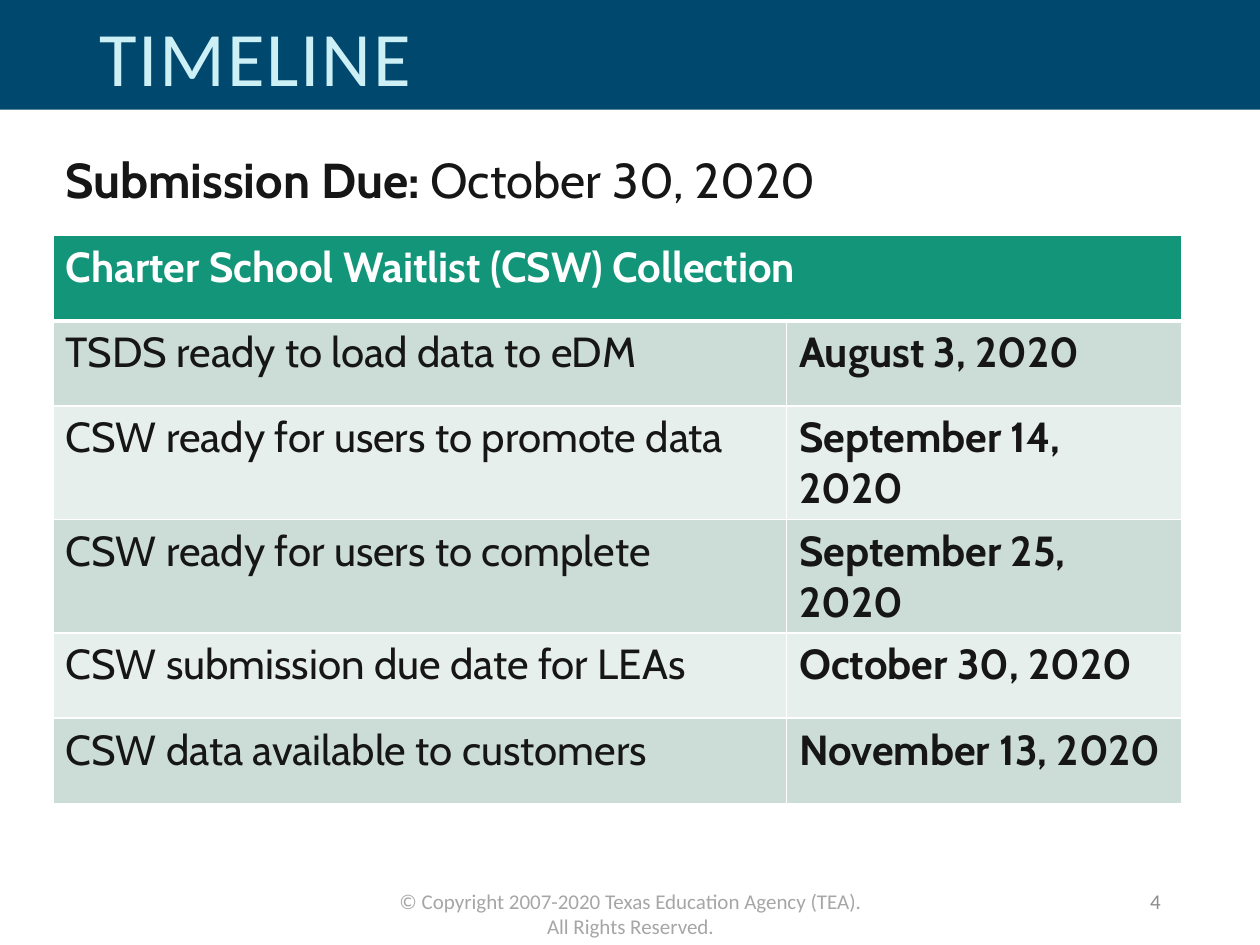
from lxml.etree import SubElement
from pptx import Presentation
from pptx.dml.color import RGBColor
from pptx.enum.shapes import MSO_SHAPE
from pptx.enum.text import MSO_ANCHOR, PP_ALIGN
from pptx.oxml.ns import qn
from pptx.util import Inches, Pt

NAVY, ICE, INK, WHITE = "00486E", "CCF0F5", "171616", "FFFFFF"
GREEN, BANDS = "129579", ("CCDDD7", "E7EFEC")
FOOTER_GREY, NUMBER_GREY = "A6A6A6", "8C8C8C"
MILESTONES = [
    ("TSDS ready to load data to eDM", "August 3, 2020"),
    ("CSW ready for users to promote data", "September 14, 2020"),
    ("CSW ready for users to complete", "September 25, 2020"),
    ("CSW submission due date for LEAs", "October 30, 2020"),
    ("CSW data available to customers", "November 13, 2020"),
]


def color(value):
    return RGBColor.from_string(value)


class TimelineSlide:
    """Holds the slide and its style; boxes are shares of the slide's size."""

    heading_font, body_font = "Calibri", "Cabin"

    def __init__(self, presentation):
        self.width, self.height = presentation.slide_width, presentation.slide_height
        self.slide = presentation.slides.add_slide(presentation.slide_layouts[5])

    def box(self, left, top, width, height):
        return (round(left * self.width), round(top * self.height),
                round(width * self.width), round(height * self.height))

    def format_run(self, run, font, size, ink, bold=False):
        run.font.name, run.font.size, run.font.bold = font, Pt(size), bold
        run.font.color.rgb = color(ink)

    def band(self, share, fill):
        shape = self.slide.shapes.add_shape(MSO_SHAPE.RECTANGLE, *self.box(0, 0, 1, share))
        shape.shadow.inherit = False
        shape.fill.solid()
        shape.fill.fore_color.rgb = color(fill)
        shape.line.fill.background()
        tree = self.slide.shapes._spTree
        tree.remove(shape._element)
        tree.insert(2, shape._element)

    def title(self, text, box):
        title = self.slide.shapes.title
        title.left, title.top, title.width, title.height = self.box(*box)
        frame = title.text_frame
        frame.text = text
        frame.vertical_anchor = MSO_ANCHOR.MIDDLE
        paragraph = frame.paragraphs[0]
        paragraph.alignment, paragraph.line_spacing = PP_ALIGN.LEFT, 0.9
        run = paragraph.runs[0]
        self.format_run(run, self.heading_font, 44, ICE)
        run.font._element.set("spc", "100")

    def text(self, runs, box, font, size, ink, align=PP_ALIGN.LEFT,
             anchor=MSO_ANCHOR.TOP, spacing=1.0):
        frame = self.slide.shapes.add_textbox(*self.box(*box)).text_frame
        frame.word_wrap, frame.vertical_anchor = True, anchor
        paragraph = frame.paragraphs[0]
        paragraph.alignment, paragraph.line_spacing = align, spacing
        for words, bold in runs:
            run = paragraph.add_run()
            run.text = words
            self.format_run(run, font, size, ink, bold)

    def cell(self, cell, text, fill, ink, bold, bottom=1):
        cell.text = text
        for run in cell.text_frame.paragraphs[0].runs:
            self.format_run(run, self.body_font, 24, ink, bold)
        properties = cell._tc.get_or_add_tcPr()
        for side, points in (("L", 1), ("R", 1), ("T", 1), ("B", bottom)):
            line = SubElement(properties, qn(f"a:ln{side}"), w=str(Pt(points)))
            solid = SubElement(line, qn("a:solidFill"))
            SubElement(solid, qn("a:srgbClr"), val=WHITE)
        cell.fill.solid()
        cell.fill.fore_color.rgb = color(fill)

    def table(self, heading, rows, box, first_share):
        left, top, width, height = self.box(*box)
        table = self.slide.shapes.add_table(len(rows) + 1, 2, left, top, width, height).table
        table.columns[0].width = round(width * first_share)
        table.columns[1].width = width - table.columns[0].width
        for column, text in enumerate((heading, "")):
            self.cell(table.cell(0, column), text, GREEN, WHITE, True, bottom=3)
        table.cell(0, 0).merge(table.cell(0, 1))
        for index, row in enumerate(rows):
            for column, text in enumerate(row):
                self.cell(table.cell(index + 1, column), text,
                          BANDS[index % 2], INK, column == 1)


def main():
    presentation = Presentation()
    presentation.slide_width, presentation.slide_height = Inches(10), Inches(7.5)
    timeline = TimelineSlide(presentation)
    left, width = 0.042, 0.896
    timeline.band(0.87 / 7.5, NAVY)
    timeline.title("TIMELINE", (0.069, 0.05 / 7.5, 0.8, 0.87 / 7.5))
    timeline.text([("Submission Due: ", True), ("October 30, 2020", False)],
                  (left, 1.19 / 7.5, width, 0.6 / 7.5), timeline.body_font, 28, INK,
                  spacing=0.9)
    timeline.table("Charter School Waitlist (CSW) Collection", MILESTONES,
                   (left, 1.87 / 7.5, width, 4.06 / 7.5), 0.65)
    timeline.text([("© Copyright 2007-2020 Texas Education Agency (TEA). All Rights Reserved.", False)],
                  (0.304, 7 / 7.5, 0.393, 0.3 / 7.5), timeline.heading_font, 12,
                  FOOTER_GREY, PP_ALIGN.CENTER)
    timeline.text([("4", False)], (0.706, 6.95 / 7.5, 0.225, 0.4 / 7.5),
                  timeline.heading_font, 12, NUMBER_GREY, PP_ALIGN.RIGHT, MSO_ANCHOR.MIDDLE)
    presentation.save("out.pptx")


if __name__ == "__main__":
    main()
